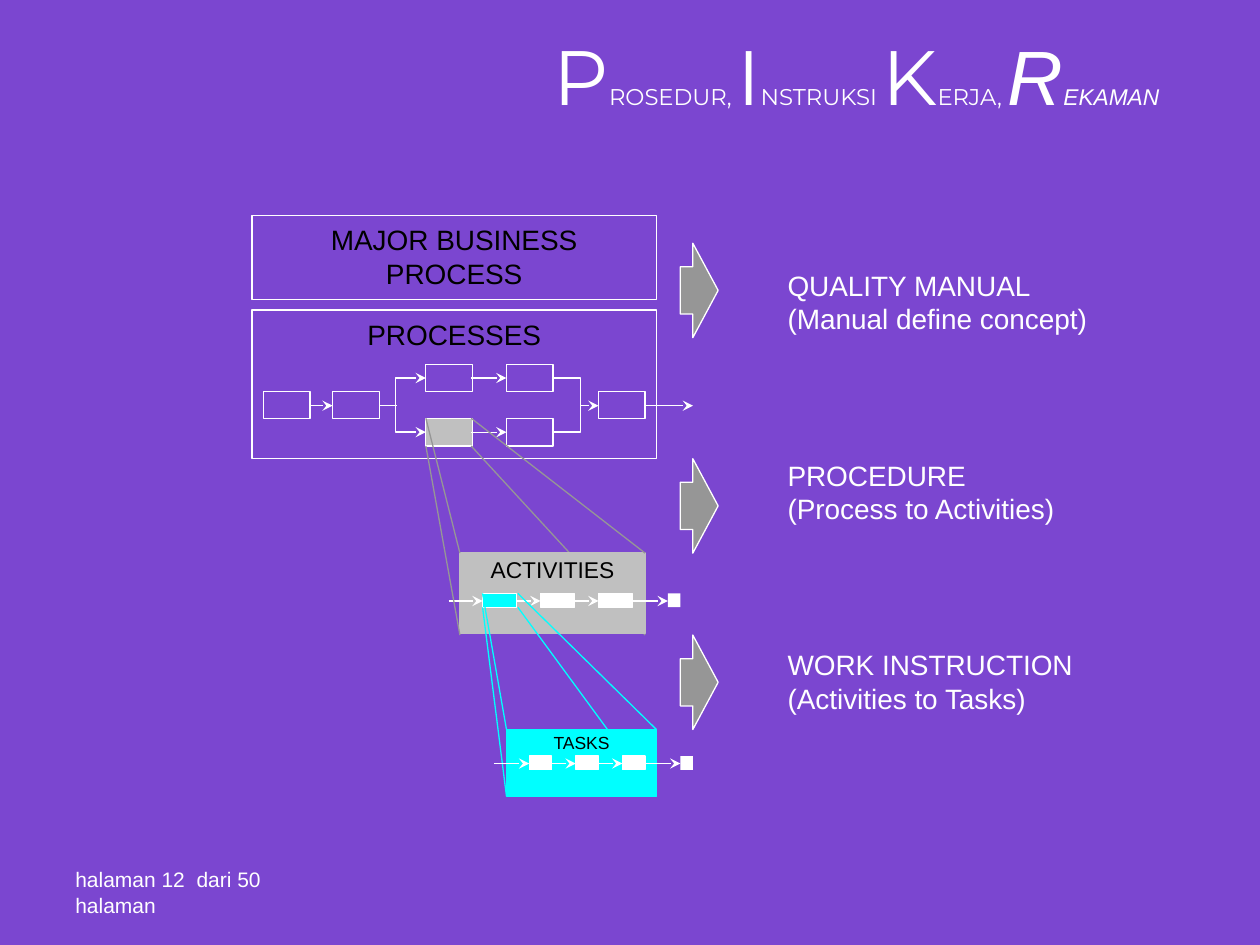
import pptx
import pptx.dml.color
import pptx.enum.shapes
import pptx.enum.text
import pptx.oxml
import pptx.oxml.ns
import pptx.util
from pptx.util import Inches

COLOURS = {"background": "7B46D0", "white": "FFFFFF", "black": "000000",
           "silver": "C0C0C0", "grey": "969696", "cyan": "00FFFF"}
ALIGN = pptx.enum.text.PP_ALIGN
ANCHOR = pptx.enum.text.MSO_ANCHOR
SHAPE = pptx.enum.shapes.MSO_SHAPE


def colour(name):
    """Return the named colour as an RGB value."""
    return pptx.dml.color.RGBColor.from_string(COLOURS[name])


def add_element(parent, xml):
    """Append a drawing element written as XML and return nothing."""
    namespace = pptx.oxml.ns.nsdecls("a")
    parent.append(pptx.oxml.parse_xml(xml.replace("/>", f" {namespace}/>")))


class DiagramSlide:
    """Holds the style and the current slide, and draws each kind of element."""

    font = "Arial"
    line_width = pptx.util.Pt(0.75)

    def __init__(self, presentation):
        """Add a titled slide with a plain background."""
        self.slide = presentation.slides.add_slide(presentation.slide_layouts[1])
        self.slide.background.fill.solid()
        self.slide.background.fill.fore_color.rgb = colour("background")

    def place(self, shape, left, top, width, height):
        """Move and size a placeholder."""
        shape.left, shape.top = Inches(left), Inches(top)
        shape.width, shape.height = Inches(width), Inches(height)
        shape.text_frame.auto_size = pptx.enum.text.MSO_AUTO_SIZE.NONE

    def style_paragraph(self, paragraph, size, ink="white", align=ALIGN.LEFT):
        """Set the font and alignment of a paragraph."""
        paragraph.alignment = align
        paragraph.font.name = self.font
        paragraph.font.size = pptx.util.Pt(size)
        paragraph.font.color.rgb = colour(ink)

    def title(self, words):
        """Write a title whose words each start with a large capital."""
        shape = self.slide.shapes.title
        self.place(shape, 0.8, 0.32, 8.5, 0.54)
        shape.text_frame.vertical_anchor = ANCHOR.MIDDLE
        paragraph = shape.text_frame.paragraphs[0]
        paragraph.alignment = ALIGN.RIGHT
        for word, font, italic in words:
            for text, size in ((word[0], 44), (word[1:], 13)):
                run = paragraph.add_run()
                run.text = text
                run.font.name = font
                run.font.size = pptx.util.Pt(size)
                run.font.italic = italic
                run.font.color.rgb = colour("white")

    def body(self, entries):
        """Write document names, each followed by its explanation."""
        shape = self.slide.placeholders[1]
        self.place(shape, 6.12, 1.89, 2.8, 4.31)
        frame = shape.text_frame
        frame.margin_left = frame.margin_right = Inches(0.13)
        frame.margin_top, frame.margin_bottom = Inches(0.24), Inches(0.06)
        frame.text = "\n".join(line for entry in entries for line in entry)
        for index, paragraph in enumerate(frame.paragraphs):
            properties = paragraph._p.get_or_add_pPr()
            properties.set("marL", "0")
            properties.set("indent", "0")
            starts_entry = index > 0 and index % 2 == 0
            paragraph.space_before = pptx.util.Pt(70 if starts_entry else 0)
            add_element(properties, "<a:buNone/>")
            self.style_paragraph(paragraph, 16)

    def footer(self, text):
        """Write the page count at the bottom left."""
        box = self.slide.shapes.add_textbox(Inches(0.5), Inches(6.83), Inches(2.33), Inches(0.5))
        frame = box.text_frame
        frame.word_wrap = True
        frame.vertical_anchor = ANCHOR.BOTTOM
        frame.text = text
        self.style_paragraph(frame.paragraphs[0], 12)

    def shape(self, left, top, width, height, fill=None, line="white", kind=SHAPE.RECTANGLE):
        """Draw a preset shape."""
        shape = self.slide.shapes.add_shape(
            kind, Inches(left), Inches(top), Inches(width), Inches(height))
        self.finish(shape, fill, line)
        return shape

    def finish(self, shape, fill, line):
        """Set the fill and outline of a shape and clear its shadow."""
        shape.shadow.inherit = False
        if fill:
            shape.fill.solid()
            shape.fill.fore_color.rgb = colour(fill)
        else:
            shape.fill.background()
        if line:
            shape.line.color.rgb = colour(line)
            shape.line.width = self.line_width
        else:
            shape.line.fill.background()

    def panel(self, text, size, left, top, width, height, fill=None, line="white", inset=0.06):
        """Draw a box with a heading at its top."""
        frame = self.shape(left, top, width, height, fill, line).text_frame
        frame.word_wrap = True
        frame.vertical_anchor = ANCHOR.TOP
        frame.margin_left = frame.margin_right = Inches(0.13)
        frame.margin_top, frame.margin_bottom = Inches(inset), Inches(0.06)
        frame.text = text
        self.style_paragraph(frame.paragraphs[0], size, "black", ALIGN.CENTER)

    def block_arrow(self, top):
        """Draw a block arrow that points to a document."""
        arrow = self.shape(5.4, top, 0.3, 0.75, "grey", kind=SHAPE.RIGHT_ARROW)
        arrow.adjustments[0], arrow.adjustments[1] = 0.5, 0.67

    def line(self, start, end, ink="white", arrow=False):
        """Draw a straight line, with an arrowhead if wanted."""
        connector = self.slide.shapes.add_connector(
            pptx.enum.shapes.MSO_CONNECTOR.STRAIGHT, *map(Inches, start + end))
        connector.line.color.rgb = colour(ink)
        connector.line.width = self.line_width
        if arrow:
            add_element(connector.line._get_or_add_ln(), '<a:tailEnd type="stealth"/>')
        add_element(connector._element.spPr, "<a:effectLst/>")

    def arrow(self, left, right, y):
        """Draw a horizontal arrow."""
        self.line((left, y), (right, y), arrow=True)

    def bracket(self, x, spine, top, bottom, arrows=False):
        """Draw a bracket that splits or joins two branches."""
        builder = self.slide.shapes.build_freeform(Inches(x), Inches(bottom), scale=1.0)
        points = ((spine, bottom), (spine, top), (x, top))
        builder.add_line_segments([tuple(map(Inches, point)) for point in points], close=False)
        shape = builder.convert_to_shape()
        self.finish(shape, None, "white")
        if arrows:
            for end in ("headEnd", "tailEnd"):
                add_element(shape.line._get_or_add_ln(), f'<a:{end} type="stealth"/>')

    def flow(self, start, first, pitch, width, end, top, first_fill):
        """Draw three steps joined by arrows and a closing square."""
        middle, tail = top + 0.06, start
        for index in range(3):
            left = first + index * pitch
            self.shape(left, top, width, 0.11, "white" if index else first_fill)
            self.arrow(tail, left, middle)
            tail = left + width
        self.shape(end, top, 0.1, 0.11, "white", None)
        self.arrow(tail, end, middle)


def main():
    """Build the slide and save it."""
    presentation = pptx.Presentation()
    presentation.slide_width, presentation.slide_height = Inches(10), Inches(7.5)
    slide = DiagramSlide(presentation)
    slide.title([("PROSEDUR, ", "Montserrat", False), ("INSTRUKSI ", "Montserrat", False),
                 ("KERJA, ", "Montserrat", False), ("REKAMAN", "Arial", True)])
    slide.body([("QUALITY MANUAL", "(Manual define concept)"),
                ("PROCEDURE", "(Process to Activities)"),
                ("WORK INSTRUCTION", "(Activities to Tasks)")])
    slide.footer("halaman 12  dari 50 halaman")

    slide.panel("MAJOR BUSINESS PROCESS", 16, 2, 1.71, 3.21, 0.67)
    slide.panel("PROCESSES", 16, 2, 2.46, 3.21, 1.18)
    for left in (2.09, 2.64, 4.75):
        slide.shape(left, 3.11, 0.37, 0.21)
    for top in (2.89, 3.32):
        slide.shape(3.38, top, 0.37, 0.22, "silver" if top > 3 else None)
        slide.shape(4.02, top, 0.37, 0.22)
        slide.arrow(3.74, 4.02, top + 0.11)
    slide.bracket(3.38, 3.14, 3, 3.43, arrows=True)
    slide.bracket(4.38, 4.61, 3, 3.43)
    slide.line((3.01, 3.22), (3.15, 3.22))
    for left, right in ((2.46, 2.64), (4.61, 4.75), (5.12, 5.5)):
        slide.arrow(left, right, 3.22)

    slide.line((3.74, 3.54), (5.12, 5.04), "grey")
    slide.panel("ACTIVITIES", 13, 3.65, 4.39, 1.47, 0.64, "silver", "silver", 0.02)
    slide.flow(3.56, 3.83, 0.46, 0.27, 5.3, 4.71, "cyan")
    for start, end in (((3.38, 3.32), (3.65, 4.39)), ((3.74, 3.32), (5.12, 4.39)),
                       ((3.38, 3.54), (3.65, 5.04))):
        slide.line(start, end, "grey")

    for start, end in (((3.83, 4.82), (4.02, 6.32)), ((4.11, 4.82), (5.21, 6.32)),
                       ((3.83, 4.71), (4.02, 5.79)), ((4.11, 4.71), (5.21, 5.79))):
        slide.line(start, end, "cyan")
    slide.panel("TASKS", 10, 4.02, 5.79, 1.19, 0.53, "cyan", "cyan", 0.02)
    slide.flow(3.92, 4.2, 0.37, 0.18, 5.4, 6, "white")
    for top in (1.93, 3.64, 5.04):
        slide.block_arrow(top)
    presentation.save("out.pptx")


if __name__ == "__main__":
    main()
